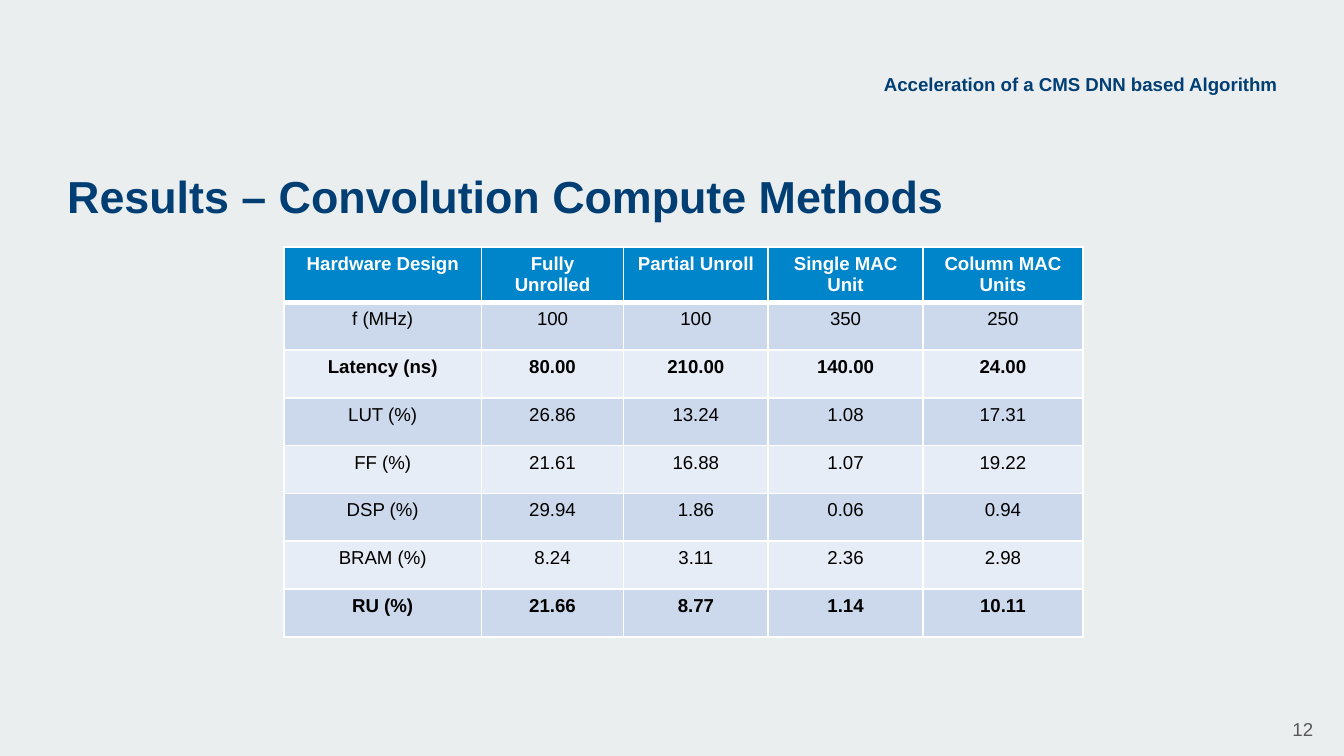
"""Build the slide that compares convolution compute methods in a results table."""
from dataclasses import dataclass

from lxml import etree
from pptx import Presentation
from pptx.dml.color import RGBColor
from pptx.enum.text import MSO_ANCHOR, MSO_AUTO_SIZE, PP_ALIGN
from pptx.oxml.ns import qn
from pptx.util import Pt

LEFT, CENTER, RIGHT = PP_ALIGN.LEFT, PP_ALIGN.CENTER, PP_ALIGN.RIGHT
TOP, MIDDLE = MSO_ANCHOR.TOP, MSO_ANCHOR.MIDDLE
NO_AUTOFIT = MSO_AUTO_SIZE.NONE

BACKGROUND = RGBColor(0xEB, 0xEE, 0xEE)
NAVY = RGBColor(0x00, 0x3E, 0x74)
BLUE = RGBColor(0x00, 0x85, 0xCA)
DARK_BAND = RGBColor(0xCC, 0xD9, 0xEC)
LIGHT_BAND = RGBColor(0xE7, 0xED, 0xF6)
GRAY = RGBColor(0x59, 0x59, 0x59)
WHITE = RGBColor(0xFF, 0xFF, 0xFF)
BLACK = RGBColor(0x00, 0x00, 0x00)

FONT = "Arial"
COLUMN_WIDTHS = (106, 76, 77.6, 82.8, 85.8)
ROW_HEIGHT = 25.6
THIN, THICK = 1, 3


@dataclass(frozen=True)
class TextStyle:
    size: float
    color: RGBColor
    bold: bool
    align: PP_ALIGN


@dataclass(frozen=True)
class Label:
    text: str
    box: tuple[float, float, float, float]
    margins: tuple[float, float, float, float]
    anchor: MSO_ANCHOR
    style: TextStyle


@dataclass(frozen=True)
class ResultRow:
    values: tuple[str, ...]
    bold: bool = False


TITLE = Label("Results – Convolution Compute Methods", (36, 87.8, 660, 30.2),
              (0, 3.6, 0, 0), MIDDLE, TextStyle(24, NAVY, True, LEFT))
TOPIC = Label("Acceleration of a CMS DNN based Algorithm", (411.8, 38.9, 272.2, 18.7),
              (0, 0, 0, 0), TOP, TextStyle(10, NAVY, True, RIGHT))
PAGE_NUMBER = Label("12", (667.4, 375.1, 43.2, 31),
                    (7.2, 7.2, 7.2, 7.2), MIDDLE, TextStyle(10, GRAY, False, RIGHT))

ROWS = (
    ResultRow(("Hardware Design", "Fully Unrolled", "Partial Unroll",
               "Single MAC Unit", "Column MAC Units"), True),
    ResultRow(("f (MHz)", "100", "100", "350", "250")),
    ResultRow(("Latency (ns)", "80.00", "210.00", "140.00", "24.00"), True),
    ResultRow(("LUT (%)", "26.86", "13.24", "1.08", "17.31")),
    ResultRow(("FF (%)", "21.61", "16.88", "1.07", "19.22")),
    ResultRow(("DSP (%)", "29.94", "1.86", "0.06", "0.94")),
    ResultRow(("BRAM (%)", "8.24", "3.11", "2.36", "2.98")),
    ResultRow(("RU (%)", "21.66", "8.77", "1.14", "10.11"), True),
)


def write_text(frame, text: str, style: TextStyle) -> None:
    frame.text = text
    paragraph = frame.paragraphs[0]
    paragraph.alignment = style.align
    font = paragraph.font
    font.name, font.size, font.bold = FONT, Pt(style.size), style.bold
    font.color.rgb = style.color


def fill_label(shape, label: Label) -> None:
    shape.left, shape.top, shape.width, shape.height = map(Pt, label.box)
    frame = shape.text_frame
    frame.word_wrap = True
    frame.auto_size = NO_AUTOFIT
    frame.vertical_anchor = label.anchor
    (frame.margin_left, frame.margin_top,
     frame.margin_right, frame.margin_bottom) = map(Pt, label.margins)
    write_text(frame, label.text, label.style)


def add_label(slide, label: Label) -> None:
    fill_label(slide.shapes.add_textbox(*map(Pt, label.box)), label)


def set_borders(cell, top: float, bottom: float) -> None:
    properties = cell._tc.get_or_add_tcPr()
    widths = {"a:lnL": THIN, "a:lnR": THIN, "a:lnT": top, "a:lnB": bottom}
    for position, (tag, width) in enumerate(widths.items()):
        line = etree.Element(qn(tag), w=str(Pt(width)))
        fill = etree.SubElement(line, qn("a:solidFill"))
        etree.SubElement(fill, qn("a:srgbClr"), val=str(WHITE))
        properties.insert(position, line)


def add_results(slide, rows: tuple[ResultRow, ...]) -> None:
    table = slide.shapes.add_table(
        len(rows), len(COLUMN_WIDTHS), Pt(152), Pt(132.4),
        Pt(sum(COLUMN_WIDTHS)), Pt(ROW_HEIGHT * len(rows))).table
    table.horz_banding = False
    for column, width in zip(table.columns, COLUMN_WIDTHS):
        column.width = Pt(width)
    for index, result in enumerate(rows):
        table.rows[index].height = Pt(ROW_HEIGHT)
        is_header = index == 0
        band = BLUE if is_header else DARK_BAND if index % 2 else LIGHT_BAND
        style = TextStyle(10, WHITE if is_header else BLACK, result.bold, CENTER)
        for cell, value in zip(table.rows[index].cells, result.values):
            cell.fill.solid()
            cell.fill.fore_color.rgb = band
            set_borders(cell, THICK if index == 1 else THIN, THICK if is_header else THIN)
            write_text(cell.text_frame, value, style)


def main() -> None:
    presentation = Presentation()
    presentation.slide_width, presentation.slide_height = Pt(720), Pt(405)
    slide = presentation.slides.add_slide(presentation.slide_layouts[5])
    slide.background.fill.solid()
    slide.background.fill.fore_color.rgb = BACKGROUND
    fill_label(slide.shapes.title, TITLE)
    add_label(slide, TOPIC)
    add_label(slide, PAGE_NUMBER)
    add_results(slide, ROWS)
    presentation.save("out.pptx")


if __name__ == "__main__":
    main()
